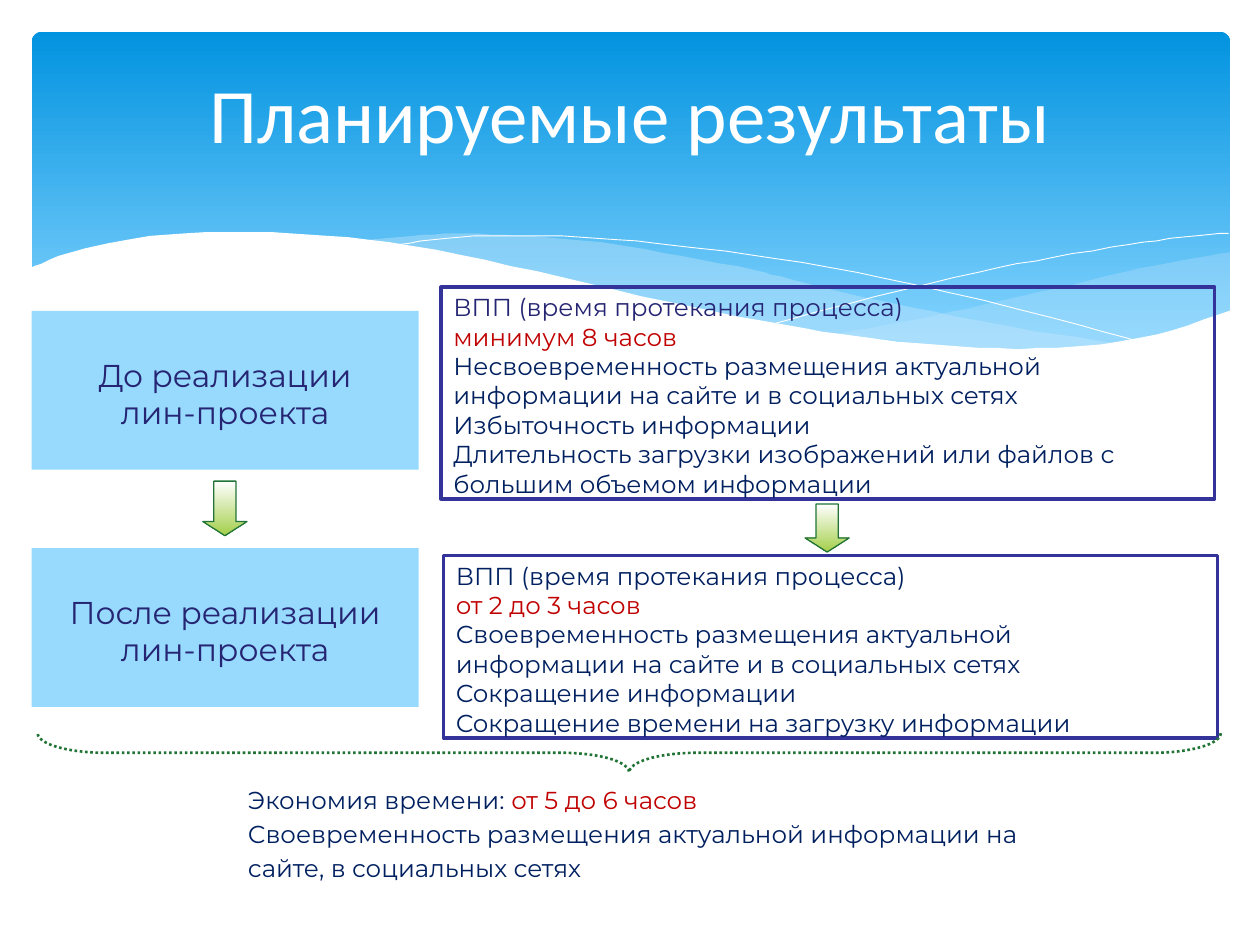
from dataclasses import dataclass

from lxml import etree
from pptx import Presentation
from pptx.dml.color import RGBColor
from pptx.enum.dml import MSO_LINE
from pptx.enum.shapes import MSO_SHAPE
from pptx.enum.text import MSO_ANCHOR, PP_ALIGN
from pptx.oxml.ns import qn
from pptx.util import Cm, Pt

RECTANGLE = MSO_SHAPE.RECTANGLE
ROUNDED = MSO_SHAPE.ROUNDED_RECTANGLE
DOWN_ARROW = MSO_SHAPE.DOWN_ARROW
LEFT_BRACE = MSO_SHAPE.LEFT_BRACE
DOTTED = MSO_LINE.ROUND_DOT
TOP, MIDDLE = MSO_ANCHOR.TOP, MSO_ANCHOR.MIDDLE
LEFT, CENTER = PP_ALIGN.LEFT, PP_ALIGN.CENTER
WAVE_UNIT = Cm(0.0254)


@dataclass(frozen=True)
class Theme:
    """Colours, fonts and type sizes of the slide."""
    white: str = "FFFFFF"
    banner_top: str = "0293E0"
    banner_bottom: str = "83D3FE"
    wave: str = "C6E7FC"
    stage: str = "31B6FD"
    frame: str = "333399"
    arrow: str = "A4CF4A"
    green: str = "217436"
    label: str = "252573"
    navy: str = "002060"
    red: str = "C00000"
    title_font: str = "Calibri"
    body_font: str = "Montserrat"
    title_size: float = 44
    stage_size: float = 18
    body_size: float = 14


THEME = Theme()

FRONT_WAVE = [(-2, 188), (21, 178), (51, 170), (94, 162), (152, 159), (205, 160),
              (267, 165), (340, 177), (422, 195), (504, 214), (578, 229), (643, 240),
              (701, 247), (753, 251), (812, 251), (862, 246), (905, 237), (952, 221)]
FRONT_BASE = [(952, 304), (-2, 304)]
BACK_CREST = [(261, 166), (303, 162), (336, 160), (374, 161), (417, 164), (464, 169),
              (516, 178), (573, 189), (604, 197), (681, 215), (750, 229), (812, 240),
              (868, 248)]
BACK_TROUGH = [(868, 248), (823, 252), (771, 253), (711, 250), (640, 241), (559, 227),
               (466, 207), (402, 191), (358, 182), (317, 174), (261, 166)]
RIGHT_CREST = [(951, 175), (910, 182), (866, 191), (807, 205), (754, 217), (704, 228),
               (636, 240)]
RIGHT_TROUGH = [(636, 240), (694, 246), (732, 251), (778, 253), (819, 252), (856, 248),
                (896, 240), (924, 232), (951, 222)]
LONG_LINE = [(284, 170), (319, 165), (362, 162), (408, 162), (464, 165), (531, 172),
             (611, 183), (702, 201), (806, 226), (882, 247)]
SHORT_LINE = [(588, 232), (670, 210), (751, 191), (811, 179), (870, 169), (913, 163),
              (950, 160)]


def smooth(points, steps=4):
    """Return a Catmull-Rom curve through the points."""
    padded = [points[0], *points, points[-1]]
    curve = [points[0]]
    for a, b, c, d in zip(padded, padded[1:], padded[2:], padded[3:]):
        for step in range(1, steps + 1):
            t = step / steps
            curve.append(tuple(
                0.5 * (2 * q + (r - p) * t + (2 * p - 5 * q + 4 * r - s) * t ** 2
                       + (3 * q - p - 3 * r + s) * t ** 3)
                for p, q, r, s in zip(a, b, c, d)))
    return curve


def style(shape, fill=None, opacity=None, line=None, width=0.75):
    """Set the fill and outline of a shape and drop its shadow."""
    shape.shadow.inherit = False
    if fill:
        shape.fill.solid()
        shape.fill.fore_color.rgb = RGBColor.from_string(fill)
        if opacity:
            color = shape._element.spPr.find(qn("a:solidFill"))[0]
            etree.SubElement(color, qn("a:alpha")).set("val", str(opacity * 1000))
    else:
        shape.fill.background()
    if line:
        shape.line.color.rgb = RGBColor.from_string(line)
        shape.line.width = Pt(width)
    else:
        shape.line.fill.background()


def shade(shape, top, bottom, end=1.0):
    """Fill a shape with a vertical gradient."""
    shape.fill.gradient()
    shape.fill.gradient_angle = 270
    for stop, color, position in zip(shape.fill.gradient_stops, (top, bottom), (0, end)):
        stop.color.rgb = RGBColor.from_string(color)
        stop.position = position


def add_box(slide, kind, box, **look):
    """Add a preset shape in a box given in centimetres."""
    shape = slide.shapes.add_shape(kind, *map(Cm, box))
    style(shape, **look)
    return shape


def add_wave(slide, box, points, closed=True, **look):
    """Add a freeform whose points are relative to the box."""
    builder = slide.shapes.build_freeform(*points[0], scale=WAVE_UNIT)
    builder.add_line_segments(points[1:], close=closed)
    style(builder.convert_to_shape(Cm(box[0]), Cm(box[1])), **look)


def write(shape, paragraphs, size, font=THEME.body_font, align=LEFT, anchor=TOP,
          insets=(0, 0, 0, 0), spacing=None, before=0):
    """Write paragraphs, each a list of text and colour pairs."""
    frame = shape.text_frame
    frame.word_wrap = True
    frame.vertical_anchor = anchor
    (frame.margin_left, frame.margin_top,
     frame.margin_right, frame.margin_bottom) = map(Cm, insets)
    for index, runs in enumerate(paragraphs):
        paragraph = frame.add_paragraph() if index else frame.paragraphs[0]
        paragraph.alignment = align
        paragraph.space_before = Pt(before)
        if spacing:
            paragraph.line_spacing = Pt(spacing)
        for text, color in runs:
            run = paragraph.add_run()
            run.text = text
            run.font.name = font
            run.font.size = Pt(size)
            run.font.color.rgb = RGBColor.from_string(color)


def add_banner(slide, box):
    """Draw the blue banner with its waves."""
    banner = add_box(slide, ROUNDED, box)
    banner.adjustments[0] = 0.03
    shade(banner, THEME.banner_top, THEME.banner_bottom, 0.9)
    add_wave(slide, box, smooth(RIGHT_CREST) + smooth(RIGHT_TROUGH),
             fill=THEME.wave, opacity=29)
    add_wave(slide, box, smooth(BACK_CREST) + smooth(BACK_TROUGH),
             fill=THEME.wave, opacity=40)
    for points in (LONG_LINE, SHORT_LINE):
        add_wave(slide, box, smooth(points), closed=False, line=THEME.white, width=0.5)
    add_wave(slide, box, smooth(FRONT_WAVE) + FRONT_BASE, fill=THEME.white)


def place_title(slide, box, text):
    """Place the title above the banner."""
    title = slide.shapes.title
    slide.shapes._spTree.append(title._element)
    title.left, title.top, title.width, title.height = map(Cm, box)
    write(title, [[(text, THEME.white)]], THEME.title_size, THEME.title_font,
          CENTER, MIDDLE)


def add_stage(slide, box, lines):
    """Add a pale blue box that names a stage."""
    stage = add_box(slide, RECTANGLE, box, fill=THEME.stage, opacity=50)
    write(stage, [[(line, THEME.label)] for line in lines], THEME.stage_size,
          align=CENTER, anchor=MIDDLE, insets=(0, 0.12, 0, 0))


def add_findings(slide, box, heading_color, duration, findings):
    """Add a framed list with the process time and findings."""
    frame = add_box(slide, RECTANGLE, box, line=THEME.frame, width=1.92)
    paragraphs = [[("ВПП (время протекания процесса)", heading_color)],
                  [(duration, THEME.red)]]
    paragraphs += [[(finding, THEME.navy)] for finding in findings]
    write(frame, paragraphs, THEME.body_size, insets=(0.25, 0.1, 1.5, 0), spacing=16.8)


def add_arrow(slide, box):
    """Add a green arrow that points down."""
    arrow = add_box(slide, DOWN_ARROW, box, line=THEME.green)
    arrow.adjustments[1] = 0.32
    shade(arrow, THEME.white, THEME.arrow)


def add_brace(slide, box):
    """Add a dotted brace lying across the box."""
    left, top, width, height = box
    shift = (width - height) / 2
    brace = add_box(slide, LEFT_BRACE, (left + shift, top - shift, height, width),
                    line=THEME.green, width=1.5)
    brace.rotation = 270
    brace.adjustments[0] = 1.73
    brace.line.dash_style = DOTTED


def add_summary(slide, box):
    """Add the text on the time saved."""
    summary = slide.shapes.add_textbox(*map(Cm, box))
    write(summary, [
        [("Экономия времени: ", THEME.navy), ("от 5 до 6 часов", THEME.red)],
        [("Своевременность размещения актуальной информации на", THEME.navy)],
        [("сайте, в социальных сетях", THEME.navy)],
    ], THEME.body_size, insets=(0, 0.1, 0, 0), before=2.6)


def main():
    """Build the slide and save it."""
    presentation = Presentation()
    presentation.slide_width, presentation.slide_height = Cm(25.4), Cm(19.05)
    slide = presentation.slides.add_slide(presentation.slide_layouts[5])
    add_banner(slide, (0.64, 0.64, 24.16, 6.86))
    place_title(slide, (1.3, 1.32, 22.81, 1.9), "Планируемые результаты")
    add_stage(slide, (0.64, 6.27, 7.8, 3.2), ["До реализации", "лин-проекта"])
    add_findings(slide, (8.89, 5.79, 15.6, 4.27), THEME.label, "минимум 8 часов", [
        "Несвоевременность размещения актуальной информации на сайте и в социальных сетях",
        "Избыточность информации",
        "Длительность загрузки изображений или файлов с большим объемом информации"])
    add_arrow(slide, (4.09, 9.7, 0.89, 1.1))
    add_arrow(slide, (16.23, 10.16, 0.89, 0.97))
    add_stage(slide, (0.64, 11.05, 7.8, 3.2), ["После реализации", "лин-проекта"])
    add_findings(slide, (8.94, 11.2, 15.6, 3.68), THEME.navy, "от 2 до 3 часов", [
        "Своевременность размещения актуальной информации на сайте и в социальных сетях",
        "Сокращение информации",
        "Сокращение времени на загрузку информации"])
    add_summary(slide, (5, 15.72, 18, 2.97))
    add_brace(slide, (0.76, 14.78, 23.85, 0.79))
    presentation.save("out.pptx")


if __name__ == "__main__":
    main()
